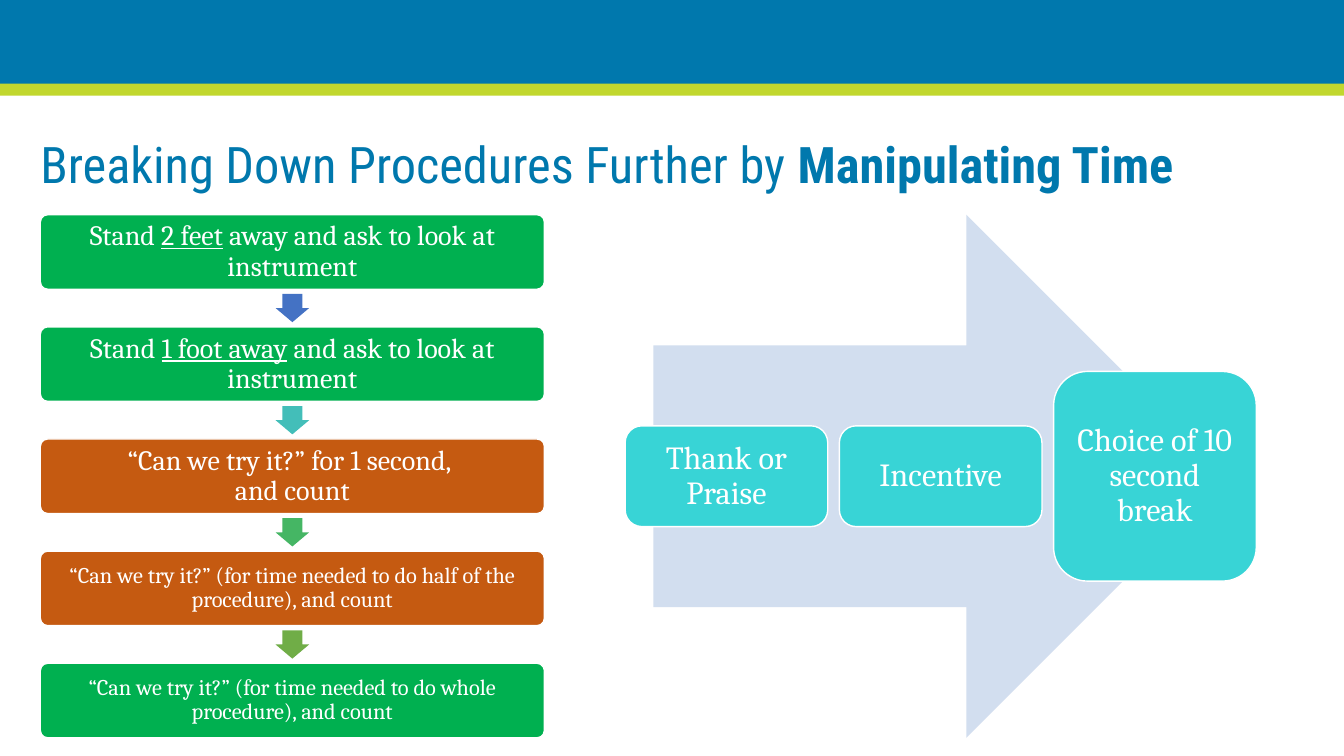
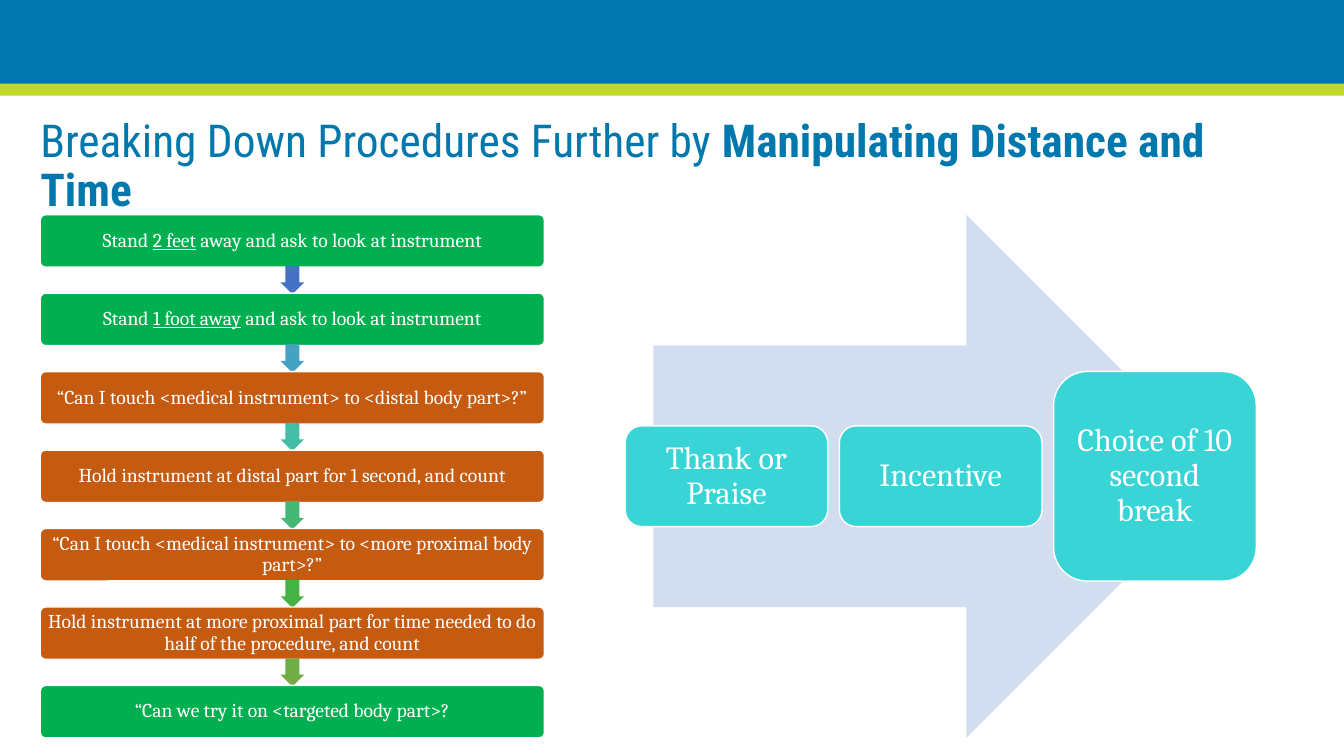
from pptx import Presentation
from pptx.dml.color import RGBColor
from pptx.enum import shapes, text
from pptx.util import Inches, Pt

SHAPE = shapes.MSO_SHAPE
COLORS = {"blue": "0078AD", "lime": "C1D72E", "green": "00B050",
          "rust": "C55A11", "aqua": "38D4D6", "pale": "D2DEEF",
          "white": "FFFFFF"}
HEAD, BODY = "Roboto Condensed", "Cambria"
TOP, TALL = 2.13, 5.19  # vertical span shared by both diagrams

# Every second part of a title is bold; every second part of a step is underlined.
LEAD = "Breaking Down Procedures Further by "
FAR = ["Stand ", "2 feet", " away and ask to look at instrument"]
NEAR = ["Stand ", "1 foot away", " and ask to look at instrument"]

SLIDES = [
    {"title": [LEAD, "Manipulating Time"], "size": 36, "width": 11.5,
     "high": 0.74,
     "steps": [
         ("green", 20, FAR),
         ("green", 20, NEAR),
         ("rust", 20, ["“Can we try it?” for 1 second, \nand count"]),
         ("rust", 16, ["“Can we try it?” (for time needed to do half of "
                       "the procedure), and count"]),
         ("green", 16, ["“Can we try it?” (for time needed to do whole "
                        "procedure), and count"])],
     "arrows": ["4472C4", "43BEB9", "45B664", "70AD47"]},
    {"title": [LEAD, "Manipulating Distance and Time"], "size": 32.4,
     "width": 12.39, "high": 0.52,
     "steps": [
         ("green", 14, FAR),
         ("green", 14, NEAR),
         ("rust", 14, ["“Can I touch <medical instrument> to "
                       "<distal body part>?”"]),
         ("rust", 14, ["Hold instrument at distal part for 1 second, "
                       "and count"]),
         ("rust", 14, ["“Can I touch <medical instrument> to "
                       "<more proximal body part>?”"]),
         ("rust", 14, ["Hold instrument at more proximal part for time "
                       "needed to do half of the procedure, and count"]),
         ("green", 14, ["“Can we try it on <targeted body part>?"])],
     "arrows": ["4472C4", "44A3C0", "43BDA7", "44B874", "46B246", "70AD47"]},
]
REWARDS = [("Thank or Praise", 1), ("Incentive", 1),
           ("Choice of 10 second break", 2.08)]


def tint(name):
    return RGBColor.from_string(COLORS.get(name, name))


def place(shape, left, top, width, high):
    shape.left, shape.top = Inches(left), Inches(top)
    shape.width, shape.height = Inches(width), Inches(high)


def write(shape, parts, size, font=BODY, color="white", mark="underline",
          align="CENTER", inset=None):
    """Fill a shape with one paragraph, marking every second part."""
    frame = shape.text_frame
    frame.word_wrap = True
    frame.auto_size = text.MSO_AUTO_SIZE.NONE
    frame.vertical_anchor = text.MSO_ANCHOR.MIDDLE
    if inset is not None:
        frame.margin_left = frame.margin_right = Inches(inset)
        frame.margin_top = frame.margin_bottom = Inches(inset)
    para = frame.paragraphs[0]
    para.alignment = getattr(text.PP_ALIGN, align)
    para.line_spacing = 0.9
    for i, part in enumerate(parts):
        for j, line in enumerate(part.split("\n")):
            if j:
                para.add_line_break()
            run = para.add_run()
            run.text = line
            run.font.name, run.font.size = font, Pt(size)
            run.font.color.rgb = tint(color)
            if i % 2:
                setattr(run.font, mark, True)


def draw(slide, kind, box, fill, line=None, adjust=()):
    shape = slide.shapes.add_shape(kind, *map(Inches, box))
    shape.shadow.inherit = False
    shape.fill.solid()
    shape.fill.fore_color.rgb = tint(fill)
    if line:
        shape.line.color.rgb = tint(line)
        shape.line.width = Pt(1)
    else:
        shape.line.fill.background()
    for i, value in enumerate(adjust):
        shape.adjustments[i] = value
    return shape


def add_bands(slide, master):
    """Draw the header bands and move them behind everything on the master."""
    bands = [((0, 0, 13.33, 0.85), "blue"), ((0, 0.83, 13.33, 0.12), "lime")]
    for i, (box, fill) in enumerate(bands):
        band = draw(slide, SHAPE.RECTANGLE, box, fill)
        master.shapes.element.insert(2 + i, band.element)


def add_steps(slide, steps, arrows, high):
    left, width, long = 0.4, 5, 0.28
    wide = 0.45 * high
    pitch = (TALL - high) / (len(steps) - 1)
    for i, (fill, size, parts) in enumerate(steps):
        top = TOP + i * pitch
        box = draw(slide, SHAPE.ROUNDED_RECTANGLE, (left, top, width, high),
                   fill, "white", [0.1])
        write(box, parts, size, inset=0.004 * size)
        if i < len(arrows):
            mid = top + (high + pitch) / 2
            draw(slide, SHAPE.DOWN_ARROW,
                 (left + (width - wide) / 2, mid - long / 2, wide, long),
                 arrows[i], adjust=[0.6, 0.5])


def add_rewards(slide):
    draw(slide, SHAPE.RIGHT_ARROW, (6.48, TOP, 5.7, TALL), "pale")
    for i, (label, high) in enumerate(REWARDS):
        top = TOP + (TALL - high) / 2
        box = draw(slide, SHAPE.ROUNDED_RECTANGLE,
                   (6.2 + i * 2.125, top, 2.01, high), "aqua", "white")
        write(box, [label], 23, inset=0.1)


def main():
    prs = Presentation()
    prs.slide_width, prs.slide_height = Inches(13.33), Inches(7.5)
    layout = prs.slide_layouts.get_by_name("Title Only")
    for i, data in enumerate(SLIDES):
        slide = prs.slides.add_slide(layout)
        if i == 0:
            add_bands(slide, prs.slide_master)
        title = slide.shapes.title
        place(title, 0.3, 1.2, data["width"], 0.92)
        write(title, data["title"], data["size"], font=HEAD, color="blue",
              mark="bold", align="LEFT")
        add_steps(slide, data["steps"], data["arrows"], data["high"])
        add_rewards(slide)
    prs.save("out.pptx")


if __name__ == "__main__":
    main()
